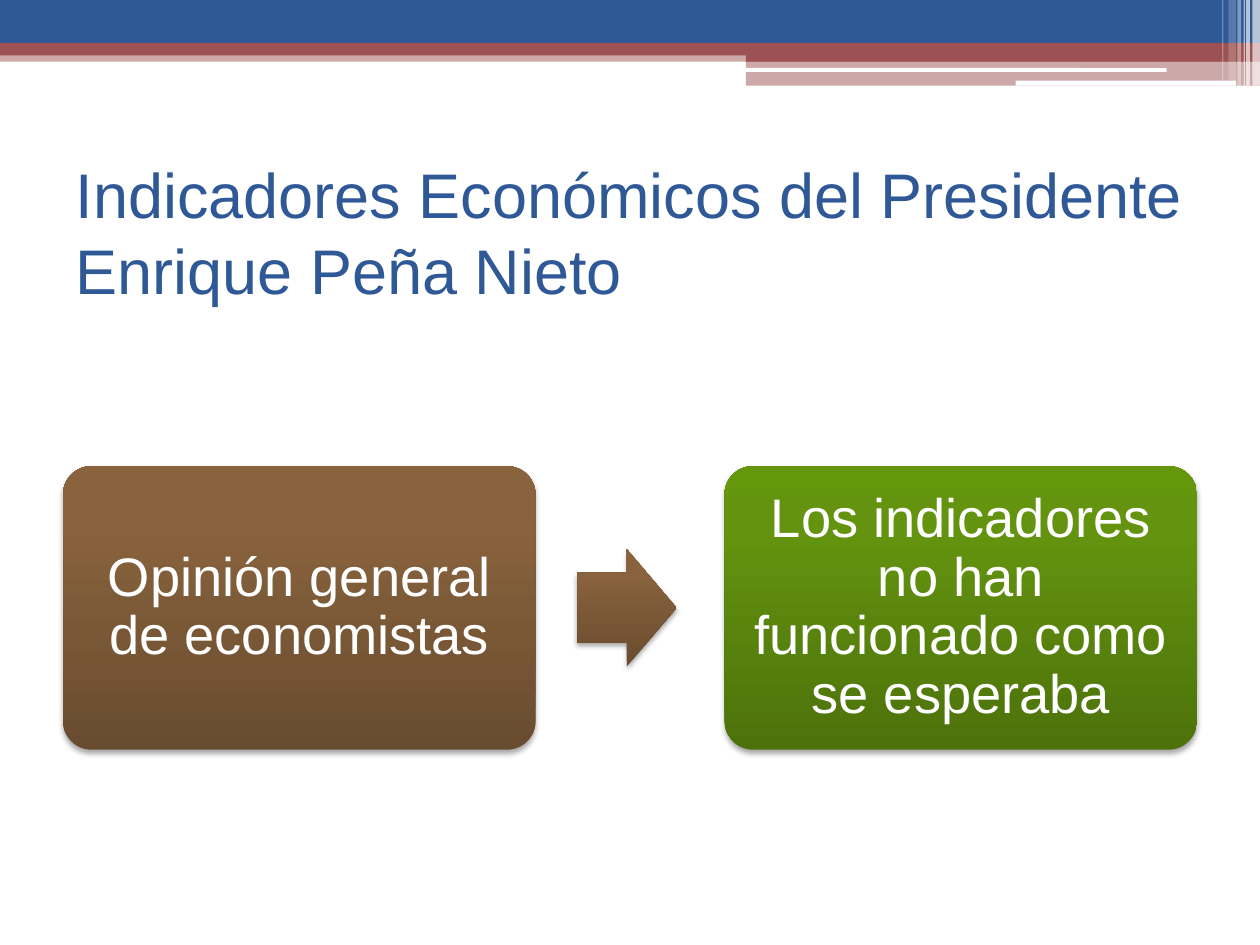
from lxml import etree
from pptx import Presentation
from pptx.dml.color import RGBColor
from pptx.enum.shapes import MSO_SHAPE
from pptx.enum.text import MSO_ANCHOR, MSO_AUTO_SIZE, PP_ALIGN
from pptx.oxml.ns import qn
from pptx.util import Inches, Pt

RECTANGLE = MSO_SHAPE.RECTANGLE
ROUNDED = MSO_SHAPE.ROUNDED_RECTANGLE
ARROW = MSO_SHAPE.RIGHT_ARROW
MIDDLE = MSO_ANCHOR.MIDDLE
LEFT, CENTER = PP_ALIGN.LEFT, PP_ALIGN.CENTER

BLUE = RGBColor(0x2F, 0x58, 0x97)
RED = RGBColor(0x9C, 0x52, 0x52)
WHITE = RGBColor(0xFF, 0xFF, 0xFF)
BLACK = RGBColor(0, 0, 0)
BROWNS = [(0, RGBColor(0x69, 0x4C, 0x2F)), (80, RGBColor(0x89, 0x63, 0x3D)),
          (100, RGBColor(0x8B, 0x63, 0x3C))]
GREENS = [(0, RGBColor(0x4D, 0x72, 0x0B)), (80, RGBColor(0x64, 0x94, 0x0F)),
          (100, RGBColor(0x65, 0x97, 0x0C))]

FONT = "Arial"
WIDTH, HEIGHT = 10, 7.5
MARGIN = 0.5
TITLE = "Indicadores Económicos del Presidente Enrique Peña Nieto"
CARDS = [("Opinión general de economistas", BROWNS),
         ("Los indicadores no han funcionado como se esperaba", GREENS)]
CARD_WIDTH, CARD_HEIGHT, CARD_TOP = 3.75, 2.25, 3.7
ARROW_LEFT, ARROW_WIDTH, ARROW_HEIGHT = 4.58, 0.79, 0.93

SPLIT = 5.92
BANDS = [
    (RECTANGLE, 0, 0.4, WIDTH, 0.09, RED, 50),
    (RECTANGLE, 0, 0, WIDTH, 0.34, BLUE, 100),
    (RECTANGLE, 0, 0.34, WIDTH, 0.1, RED, 100),
    (RECTANGLE, SPLIT, 0.39, WIDTH - SPLIT, 0.1, RED, 100),
    (RECTANGLE, SPLIT, 0.48, WIDTH - SPLIT, 0.2, RED, 50),
    (ROUNDED, 5.91, 0.54, 3.35, 0.03, WHITE, 100),
    (ROUNDED, 8.06, 0.64, 1.75, 0.04, WHITE, 100),
]
STRIPES = [(9.94, 0.06, 0.68, 65), (9.89, 0.03, 0.68, 65), (9.87, 0.01, 0.68, 60),
           (9.82, 0.03, 0.68, 40), (9.75, 0.06, 0.64, 20), (9.7, 0.01, 0.64, 30)]


def add_color(parent, color, opacity=100):
    element = etree.SubElement(parent, qn("a:srgbClr"), val=str(color))
    if opacity < 100:
        etree.SubElement(element, qn("a:alpha"), val=str(opacity * 1000))


def add_plain_shape(slide, kind, left, top, width, height):
    shape = slide.shapes.add_shape(
        kind, Inches(left), Inches(top), Inches(width), Inches(height))
    shape.shadow.inherit = False
    shape.line.fill.background()
    return shape


def add_band(slide, kind, left, top, width, height, color, opacity):
    shape = add_plain_shape(slide, kind, left, top, width, height)
    shape.fill.solid()
    shape.fill.fore_color.rgb = color
    if opacity < 100:
        fill = shape._element.spPr.find(qn("a:solidFill"))
        fill.clear()
        add_color(fill, color, opacity)


def add_glossy_shape(slide, kind, left, width, height, stops):
    top = CARD_TOP + (CARD_HEIGHT - height) / 2
    shape = add_plain_shape(slide, kind, left, top, width, height)
    shape.fill.gradient()
    shape.fill.gradient_angle = 90
    properties = shape._element.spPr
    stop_list = properties.find(qn("a:gradFill")).find(qn("a:gsLst"))
    for stop in list(stop_list):
        stop_list.remove(stop)
    for position, color in stops:
        add_color(etree.SubElement(stop_list, qn("a:gs"), pos=str(position * 1000)), color)
    shadow = etree.SubElement(
        properties.find(qn("a:effectLst")), qn("a:outerShdw"), blurRad=str(Pt(3.1)),
        dist=str(Pt(1.8)), dir="5400000", rotWithShape="0")
    add_color(shadow, BLACK, 35)
    return shape


def write_text(shape, text, size, color, alignment):
    frame = shape.text_frame
    frame.text = text
    frame.word_wrap = True
    frame.auto_size = MSO_AUTO_SIZE.NONE
    frame.vertical_anchor = MIDDLE
    paragraph = frame.paragraphs[0]
    paragraph.alignment = alignment
    font = paragraph.runs[0].font
    font.name, font.size, font.color.rgb = FONT, Pt(size), color
    return frame


def main():
    presentation = Presentation()
    presentation.slide_width = Inches(WIDTH)
    presentation.slide_height = Inches(HEIGHT)
    slide = presentation.slides.add_slide(presentation.slide_layouts[5])

    for band in BANDS:
        add_band(slide, *band)
    for left, width, height, opacity in STRIPES:
        add_band(slide, RECTANGLE, left, 0, width, height, WHITE, opacity)

    title = slide.shapes.title
    title.left, title.top = Inches(MARGIN), Inches(1.25)
    title.width, title.height = Inches(WIDTH - 2 * MARGIN), Inches(1.17)
    write_text(title, TITLE, 36, BLUE, LEFT)

    card_step = WIDTH - 2 * MARGIN - CARD_WIDTH
    for index, (text, stops) in enumerate(CARDS):
        card = add_glossy_shape(slide, ROUNDED, MARGIN + index * card_step,
                                CARD_WIDTH, CARD_HEIGHT, stops)
        card.adjustments[0] = 0.1
        frame = write_text(card, text, 31, WHITE, CENTER)
        frame.margin_left = frame.margin_right = Inches(0.13)
        frame.margin_top = frame.margin_bottom = Inches(0.13)
        frame.paragraphs[0].line_spacing = 0.9

    arrow = add_glossy_shape(slide, ARROW, ARROW_LEFT, ARROW_WIDTH, ARROW_HEIGHT, BROWNS)
    arrow.adjustments[0] = 0.6
    arrow.adjustments[1] = 0.5

    presentation.save("out.pptx")


if __name__ == "__main__":
    main()
